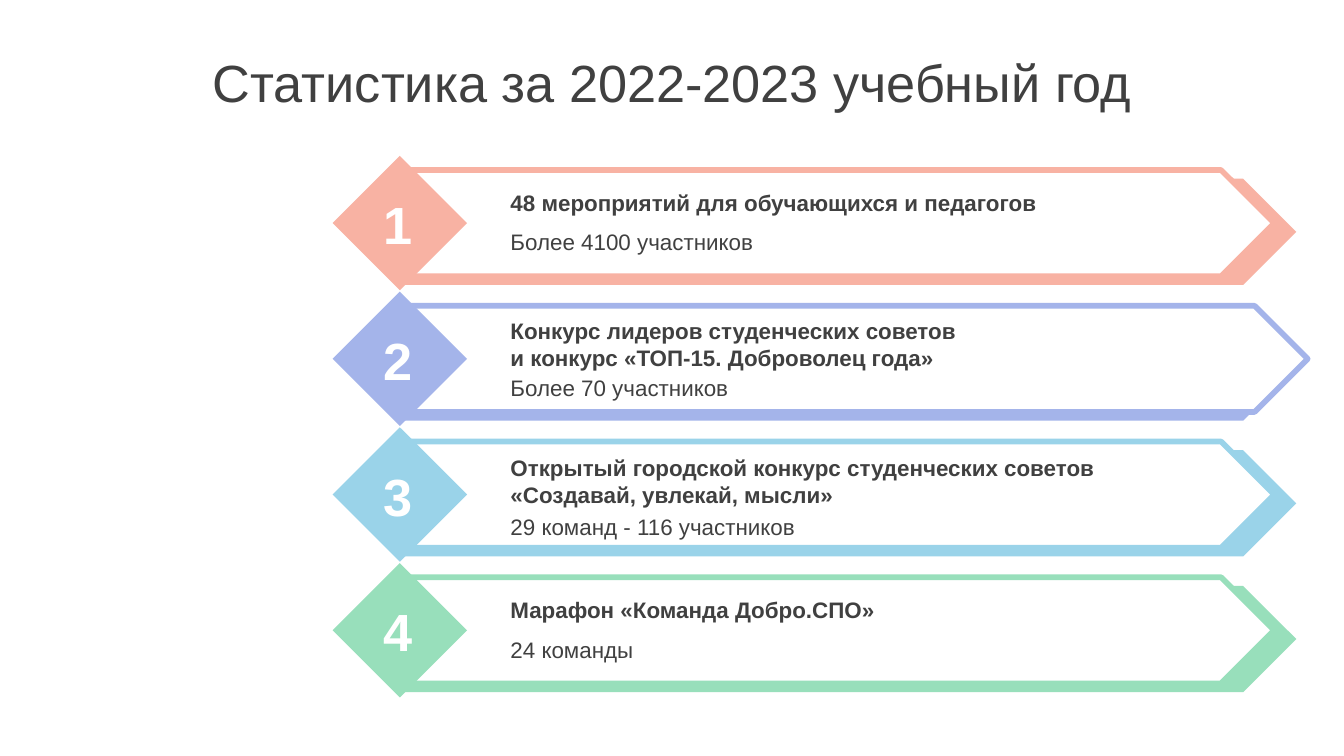
from pptx import Presentation
from pptx.dml.color import RGBColor
from pptx.enum import shapes, text
from pptx.util import Emu, Pt

PX = 4572
COLORS = {"ink": "404040", "white": "FFFFFF", "coral": "F8B2A3",
          "violet": "A4B4EA", "sky": "9AD3E9", "mint": "98DFBB"}
ROW_LEFT, ROW_TOP, ROW_STEP = 495, 232, 202
ROWS = [
    ("coral", 1295, (40, 1040, 60), 98,
     ["48 мероприятий для обучающихся и педагогов"], "Более 4100 участников"),
    ("violet", 1345, (28, 1040, 100), 113,
     ["Конкурс лидеров студенческих советов",
      "и конкурс «ТОП-15. Доброволец года»"], "Более 70 участников"),
    ("sky", 1295, (30, 1040, 100), 118,
     ["Открытый городской конкурс студенческих советов «Создавай, увлекай, мысли»"],
     "29 команд - 116 участников"),
    ("mint", 1295, (40, 1154, 60), 99,
     ["Марафон «Команда Добро.СПО»"], "24 команды"),
]


def color(name):
    """Return the named colour."""
    return RGBColor.from_string(COLORS[name])


def px(*values):
    """Turn pixel lengths into EMU."""
    return [Emu(v * PX) for v in values]


def add_shape(s, kind, box, fill, line=None):
    """Add a flat preset shape, outlined if a line colour is given."""
    sp = s.shapes.add_shape(kind, *px(*box))
    sp.shadow.inherit = False
    sp.fill.solid()
    sp.fill.fore_color.rgb = color(fill)
    if line:
        sp.line.color.rgb = color(line)
        sp.line.width = Pt(3)
    else:
        sp.line.fill.background()


def add_text(s, box, lines, size=12, ink="ink", bold=False, centred=False):
    """Add a wrapped text box with one paragraph per line."""
    tf = s.shapes.add_textbox(*px(*box)).text_frame
    tf.word_wrap = True
    if centred:
        tf.vertical_anchor = text.MSO_ANCHOR.MIDDLE
    for i, line in enumerate(lines):
        p = tf.add_paragraph() if i else tf.paragraphs[0]
        p.alignment = text.PP_ALIGN.CENTER if centred else text.PP_ALIGN.LEFT
        r = p.add_run()
        r.text = line
        r.font.name = "Arial"
        r.font.size = Pt(size)
        r.font.bold = bold
        r.font.color.rgb = color(ink)


def add_row(s, x, y, number, row):
    """Add a numbered arrow banner with its heading and detail."""
    accent, width, (head_y, text_w, head_h), detail_y, heading, detail = row
    kinds = shapes.MSO_SHAPE
    add_shape(s, kinds.PENTAGON, (x + 106, y + 34, 1328, 158), accent)
    add_shape(s, kinds.PENTAGON, (x + 106, y + 21, width, 158), "white", accent)
    add_shape(s, kinds.DIAMOND, (x, y, 200, 200), accent)
    add_text(s, (x + 53, y + 44, 88, 114), [str(number)], 28, "white", True, True)
    add_text(s, (x + 245, y + head_y, text_w, head_h), heading, bold=True)
    add_text(s, (x + 245, y + detail_y, text_w, 60), [detail])


def main():
    """Build the statistics slide."""
    prs = Presentation()
    prs.slide_width, prs.slide_height = px(2000, 1125)
    s = prs.slides.add_slide(prs.slide_layouts[6])
    add_text(s, (0, 58, 2000, 126), ["Статистика за 2022-2023 учебный год"], 28,
             centred=True)
    for i, row in enumerate(ROWS):
        add_row(s, ROW_LEFT, ROW_TOP + i * ROW_STEP, i + 1, row)
    prs.save("out.pptx")


if __name__ == "__main__":
    main()
